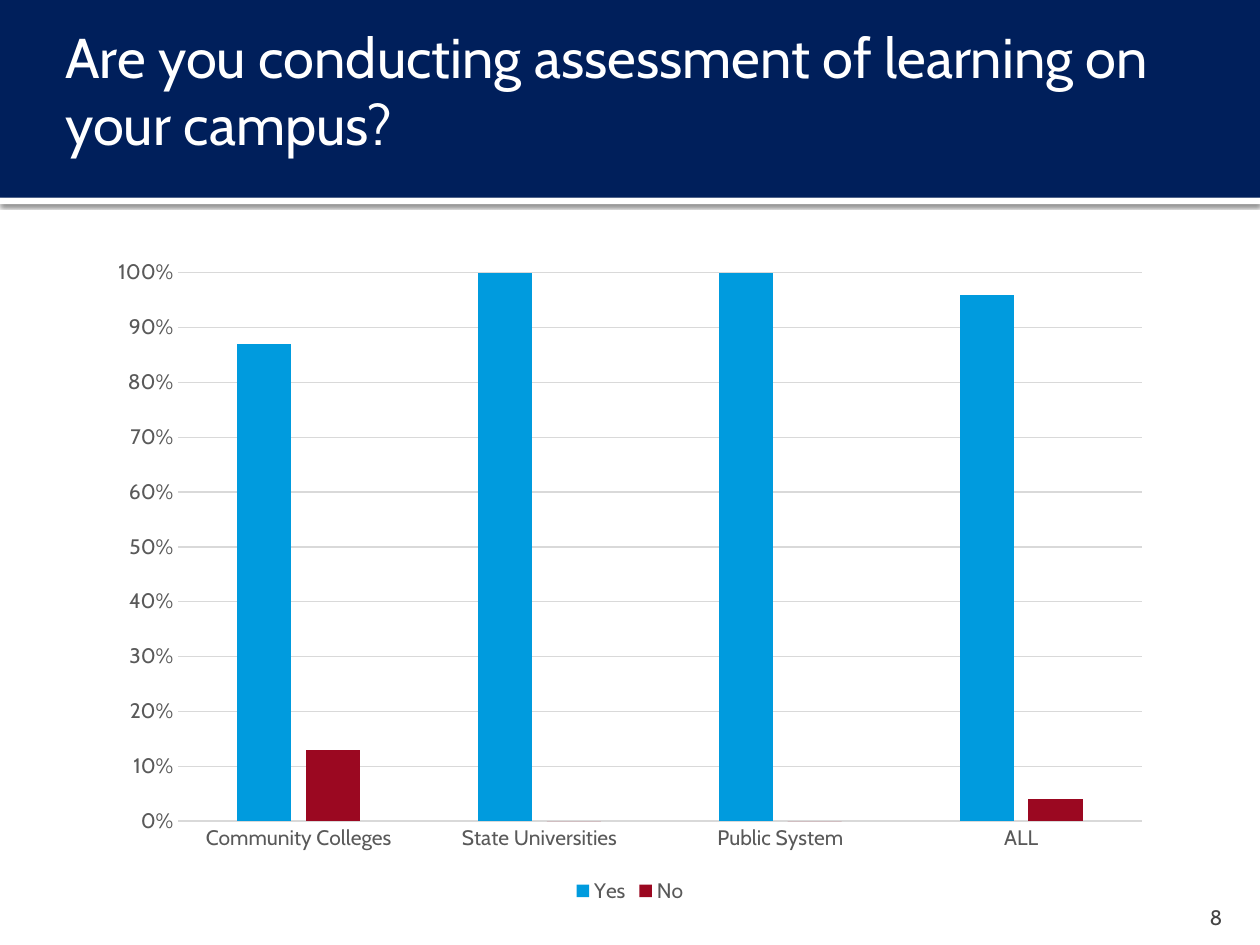
from pptx import Presentation
from pptx.chart.data import CategoryChartData as ChartData
from pptx.dml.color import RGBColor as Rgb
from pptx.enum.chart import XL_CHART_TYPE as Kind, XL_LEGEND_POSITION as Place, XL_TICK_MARK as Tick
from pptx.enum.shapes import MSO_SHAPE as Shape
from pptx.enum.text import MSO_ANCHOR as Anchor, PP_ALIGN as Align
from pptx.oxml import parse_xml
from pptx.oxml.ns import nsdecls, qn
from pptx.util import Inches, Pt

FONT = "Cabin"
HUES = {
    "white": "FFFFFF", "navy": "001F5B", "page": "454545", "label": "595959",
    "grid": "D9D9D9", "Yes": "009BDE", "No": "9B0821",
}


def style(font, size, hue):
    font.name = FONT
    font.size = Pt(size)
    font.color.rgb = Rgb.from_string(HUES[hue])


def add_text(text, box, size, hue, anchor, align, pads):
    frame = slide.shapes.add_textbox(*map(Inches, box)).text_frame
    frame.word_wrap = True
    frame.vertical_anchor = anchor
    frame.margin_left, frame.margin_top, frame.margin_right, frame.margin_bottom = map(Inches, pads)
    frame.text = text
    para = frame.paragraphs[0]
    para.alignment = align
    style(para.runs[0].font, size, hue)


deck = Presentation()
deck.slide_width, deck.slide_height = Inches(10), Inches(7.5)
slide = deck.slides.add_slide(deck.slide_layouts[6])

for top, high, hue in [(1.57, 0.05, "white"), (0, 1.57, "navy")]:
    band = slide.shapes.add_shape(Shape.RECTANGLE, 0, Inches(top), Inches(10), Inches(high))
    band.shadow.inherit = False
    band.fill.solid()
    band.fill.fore_color.rgb = Rgb.from_string(HUES[hue])
    band.line.fill.background()
    if hue == "white":
        glow = band._element.spPr.find(qn("a:effectLst"))
        glow.append(parse_xml(
            f'<a:outerShdw {nsdecls("a")} blurRad="{Pt(2.5)}" dist="{Pt(0.8)}" dir="5400000" rotWithShape="0">'
            '<a:srgbClr val="000000"><a:alpha val="60000"/></a:srgbClr></a:outerShdw>'))

add_text("8", (9, 7.08, 0.8, 0.3), 12, "page", Anchor.BOTTOM, Align.RIGHT, (0.1, 0.05, 0.1, 0))
add_text("Are you conducting assessment of learning on your campus?", (0.42, 0.25, 9.17, 0.92),
         32, "white", Anchor.MIDDLE, Align.LEFT, (0.1, 0.05, 0.05, 0.05))

data = ChartData(number_format="0%")
data.categories = ["Community Colleges", "State Universities", "Public System", "ALL"]
data.add_series("Yes", [0.87, 1, 1, 0.96])
data.add_series("No", [0.13, 0, 0, 0.04])
box = map(Inches, (0.77, 1.96, 8.46, 5.25))
chart = slide.shapes.add_chart(Kind.COLUMN_CLUSTERED, *box, data).chart
style(chart.font, 12, "label")
chart.has_title = False
chart.has_legend = True
chart.legend.position = Place.BOTTOM
chart.legend.include_in_layout = False
style(chart.legend.font, 12, "label")

plot = chart.plots[0]
plot.gap_width = 219
plot.overlap = -27
plot.vary_by_categories = False
for group in plot.series:
    group.format.fill.solid()
    group.format.fill.fore_color.rgb = Rgb.from_string(HUES[group.name])

cats, vals = chart.category_axis, chart.value_axis
for axis in (cats, vals):
    axis.major_tick_mark = axis.minor_tick_mark = Tick.NONE
    style(axis.tick_labels.font, 12, "label")
vals.minimum_scale, vals.maximum_scale, vals.major_unit = 0, 1, 0.1
vals.tick_labels.number_format = "0%"
vals.tick_labels.number_format_is_linked = False
vals.format.line.fill.background()
for line in (cats.format.line, vals.major_gridlines.format.line):
    line.color.rgb = Rgb.from_string(HUES["grid"])
    line.width = Pt(0.75)

deck.save("out.pptx")
